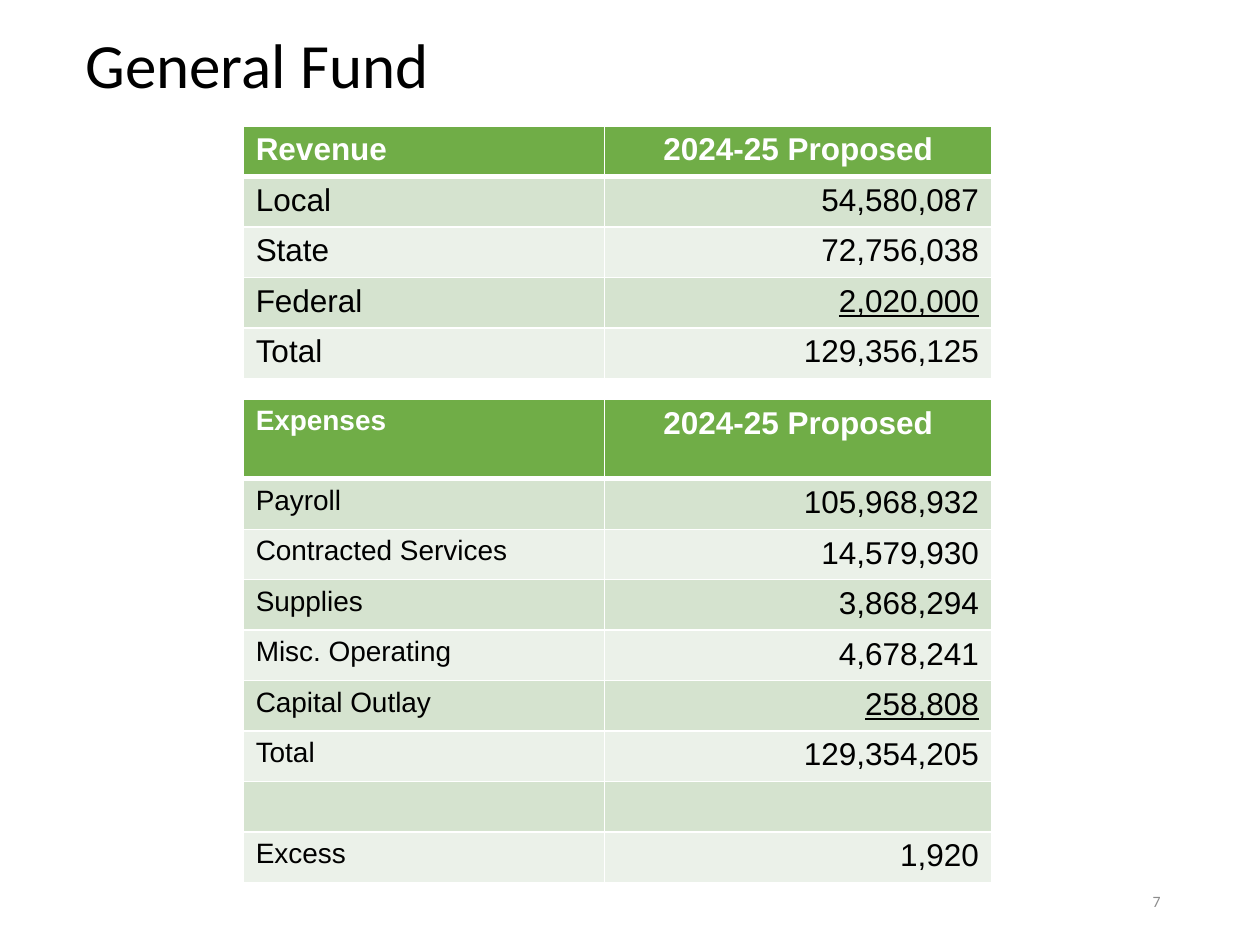
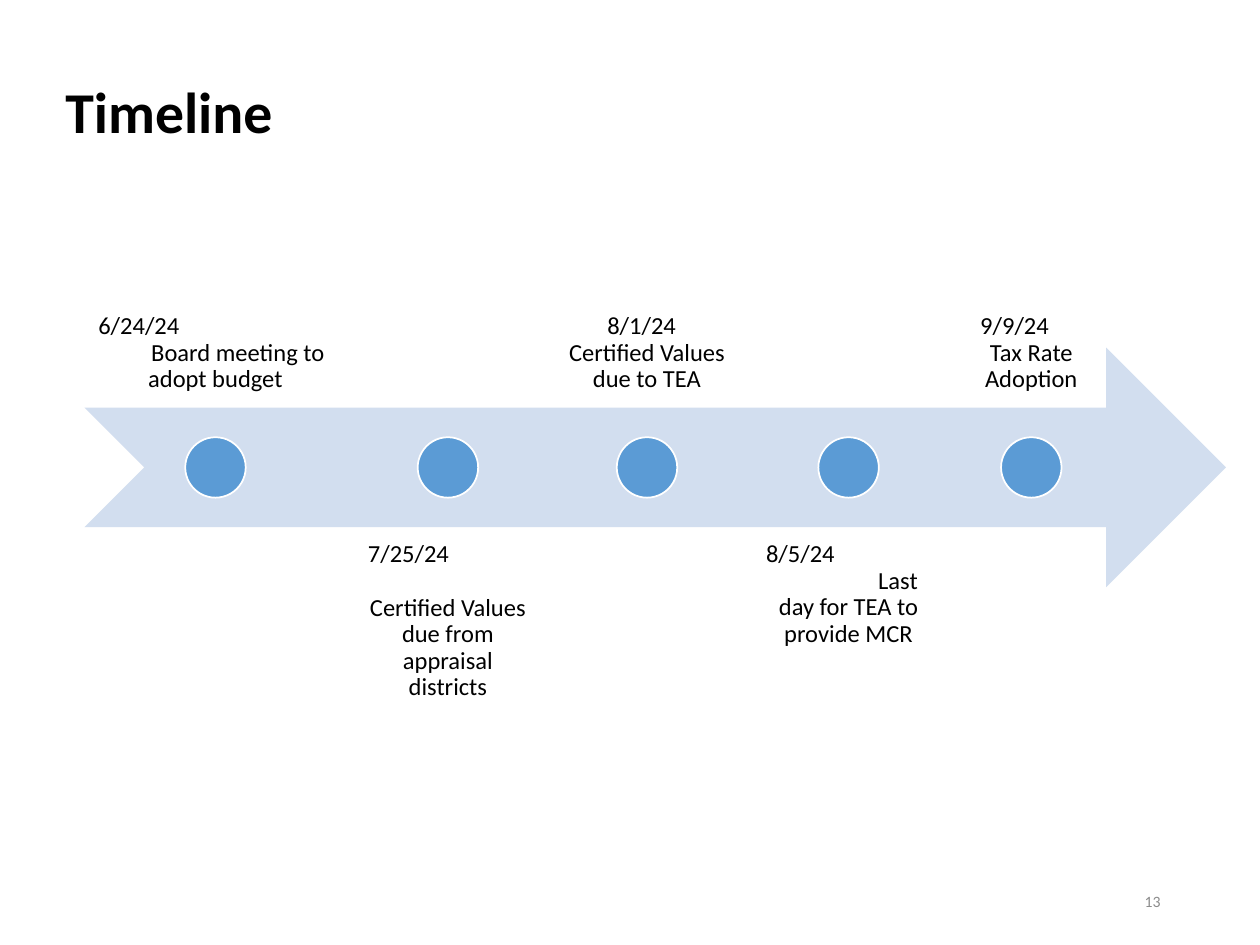
"""Build the general fund and timeline slides of a budget presentation."""
from pptx import Presentation
from pptx.dml.color import RGBColor
from pptx.enum.shapes import MSO_SHAPE as Shape
from pptx.enum.text import MSO_ANCHOR as Anchor, PP_ALIGN as Align
from pptx.oxml import parse_xml
from pptx.oxml.ns import nsdecls
from pptx.util import Inches, Pt

WIDTH, HEIGHT = 10, 7.5
BLACK, WHITE, GREY = "000000", "FFFFFF", "8C8C8C"
GREEN, BANDS = "70AD47", ("D5E3CF", "EBF1E9")
PALE_BLUE, BLUE = "D2DEEF", "5B9BD5"

HEADING = "2024-25 Proposed"
REVENUE = [("Revenue", HEADING), ("Local", "54,580,087"), ("State", "72,756,038"),
           ("Federal", "2,020,000"), ("Total", "129,356,125")]
EXPENSES = [("Expenses", HEADING), ("Payroll", "105,968,932"),
            ("Contracted Services", "14,579,930"), ("Supplies", "3,868,294"),
            ("Misc. Operating", "4,678,241"), ("Capital Outlay", "258,808"),
            ("Total", "129,354,205"), ("", ""), ("Excess", "1,920")]
TABLES = [
    {"rows": REVENUE, "top": 1, "label_size": 18, "header_height": 0.38},
    {"rows": EXPENSES, "top": 3.17, "label_size": 16, "header_height": 0.63},
]
TABLE_LEFT, COLUMNS, ROW_HEIGHT, EMPTY_HEIGHT = 1.93, (2.87, 3.07), 0.38, 0.4

CENTRED = None
EVENTS = [
    (2.08, [("6/24/24", 0), ("Board meeting to", 0.42), ("adopt budget", CENTRED)]),
    (1.49, [("7/25/24", 0), ("Certified Values due from appraisal districts", CENTRED, 15.4)]),
    (1.55, [("8/1/24", 0.35), ("Certified Values due to TEA", CENTRED)]),
    (1.53, [("8/5/24", 0), ("Last", 0.89), ("day for TEA to provide MCR", CENTRED)]),
    (1.25, [("9/9/24", 0.11), ("Tax Rate Adoption", CENTRED)]),
]
ARROW_LEFT, ARROW_TOP, ARROW_WIDTH, ARROW_HEIGHT = 0.67, 2.76, 9.06, 1.9
DOT, EVENT_GAP, EVENT_INSET = 0.48, 0.06, 0.11


def color(value):
    """Turn a hex string into a colour."""
    return RGBColor.from_string(value)


def set_font(font, fill=BLACK, **values):
    """Apply a colour and other format values to a font."""
    font.color.rgb = color(fill)
    for name, value in values.items():
        setattr(font, name, value)


def add_box(slide, place, anchor, inset=0.1):
    """Add a wrapping text box and return its text frame."""
    frame = slide.shapes.add_textbox(*map(Inches, place)).text_frame
    values = {"word_wrap": True, "vertical_anchor": anchor,
              "margin_left": Inches(inset), "margin_right": Inches(inset)}
    if inset == EVENT_INSET:
        values |= {"margin_top": Inches(inset), "margin_bottom": Inches(inset)}
    for name, value in values.items():
        setattr(frame, name, value)
    return frame


def write(paragraph, text, align=Align.LEFT, spacing=1.0, **font):
    """Put one formatted run in a paragraph."""
    paragraph.alignment, paragraph.line_spacing = align, spacing
    run = paragraph.add_run()
    run.text = text
    set_font(run.font, **font)


def add_frame(presentation, title, place, number, size, bold=False):
    """Add a blank slide with its title and page number."""
    slide = presentation.slides.add_slide(presentation.slide_layouts[6])
    write(add_box(slide, place, Anchor.MIDDLE).paragraphs[0], title,
          spacing=0.9, name="Calibri", size=Pt(size), bold=bold)
    write(add_box(slide, (7.06, 6.95, 2.25, 0.4), Anchor.MIDDLE).paragraphs[0], str(number),
          Align.RIGHT, fill=GREY, name="Calibri", size=Pt(9))
    return slide


def add_shape(slide, kind, place, fill, line=None):
    """Add a flat preset shape."""
    shape = slide.shapes.add_shape(kind, *map(Inches, place))
    shape.shadow.inherit = False
    shape.fill.solid()
    shape.fill.fore_color.rgb = color(fill)
    if line:
        shape.line.color.rgb, shape.line.width = color(line), Pt(1)
    else:
        shape.line.fill.background()


def style_cell(cell, fill, bottom):
    """Give a cell white borders and a fill."""
    properties = cell._tc.get_or_add_tcPr()
    for side, points in {"L": 1, "R": 1, "T": 1, "B": bottom}.items():
        properties.append(parse_xml(
            f'<a:ln{side} {nsdecls("a")} w="{Pt(points)}"><a:solidFill>'
            f'<a:srgbClr val="{WHITE}"/></a:solidFill></a:ln{side}>'))
    cell.fill.solid()
    cell.fill.fore_color.rgb = color(fill)


def add_budget_table(slide, rows, top, label_size, header_height):
    """Add a banded table whose last amount before the total is underlined."""
    heights = [header_height] + [ROW_HEIGHT if label else EMPTY_HEIGHT for label, _ in rows[1:]]
    place = (TABLE_LEFT, top, sum(COLUMNS), sum(heights))
    table = slide.shapes.add_table(len(rows), len(COLUMNS), *map(Inches, place)).table
    for column, width in zip(table.columns, COLUMNS):
        column.width = Inches(width)
    last_amount = [label for label, _ in rows].index("Total") - 1
    for index, (row, height) in enumerate(zip(rows, heights)):
        table.rows[index].height = Inches(height)
        header = index == 0
        amount_align = Align.CENTER if header else Align.RIGHT
        formats = ((Align.LEFT, label_size), (amount_align, 18))
        for column, (text, (align, size)) in enumerate(zip(row, formats)):
            cell = table.cell(index, column)
            style_cell(cell, GREEN if header else BANDS[(index - 1) % 2], 3 if header else 1)
            if text:
                write(cell.text_frame.paragraphs[0], text, align,
                      fill=WHITE if header else BLACK, name="Arial", size=Pt(size),
                      bold=header, underline=column == 1 and index == last_amount)


def add_event_text(slide, place, anchor, lines):
    """Write the date and the wording of one event."""
    frame = add_box(slide, place, anchor, EVENT_INSET)
    for index, (text, indent, *before) in enumerate(lines):
        paragraph = frame.add_paragraph() if index else frame.paragraphs[0]
        write(paragraph, text, Align.CENTER if indent is CENTRED else Align.LEFT,
              0.9, name="Calibri", size=Pt(14))
        if indent:
            paragraph._p.get_or_add_pPr().set("marL", str(Inches(indent)))
        if before:
            paragraph.space_before = Pt(before[0])


def add_timeline(slide):
    """Draw the arrow, its dots and the events alternately above and below."""
    add_shape(slide, Shape.NOTCHED_RIGHT_ARROW,
              (ARROW_LEFT, ARROW_TOP, ARROW_WIDTH, ARROW_HEIGHT), PALE_BLUE)
    middle, left = ARROW_TOP + ARROW_HEIGHT / 2, ARROW_LEFT
    for index, (width, lines) in enumerate(EVENTS):
        below = index % 2
        top = middle + DOT if below else middle - DOT - ARROW_HEIGHT
        add_event_text(slide, (left, top, width, ARROW_HEIGHT),
                       Anchor.TOP if below else Anchor.BOTTOM, lines)
        dot_place = (left + (width - DOT) / 2, middle - DOT / 2, DOT, DOT)
        add_shape(slide, Shape.OVAL, dot_place, BLUE, WHITE)
        left += width + EVENT_GAP


def main():
    """Build and save both slides."""
    presentation = Presentation()
    presentation.slide_width, presentation.slide_height = Inches(WIDTH), Inches(HEIGHT)
    fund = add_frame(presentation, "General Fund", (0.58, 0.08, 8.95, 0.92), 7, 36)
    for table in TABLES:
        add_budget_table(fund, **table)
    add_timeline(add_frame(presentation, "Timeline", (0.42, 0.58, 8.95, 0.67), 13, 33, True))
    presentation.save("out.pptx")


if __name__ == "__main__":
    main()
